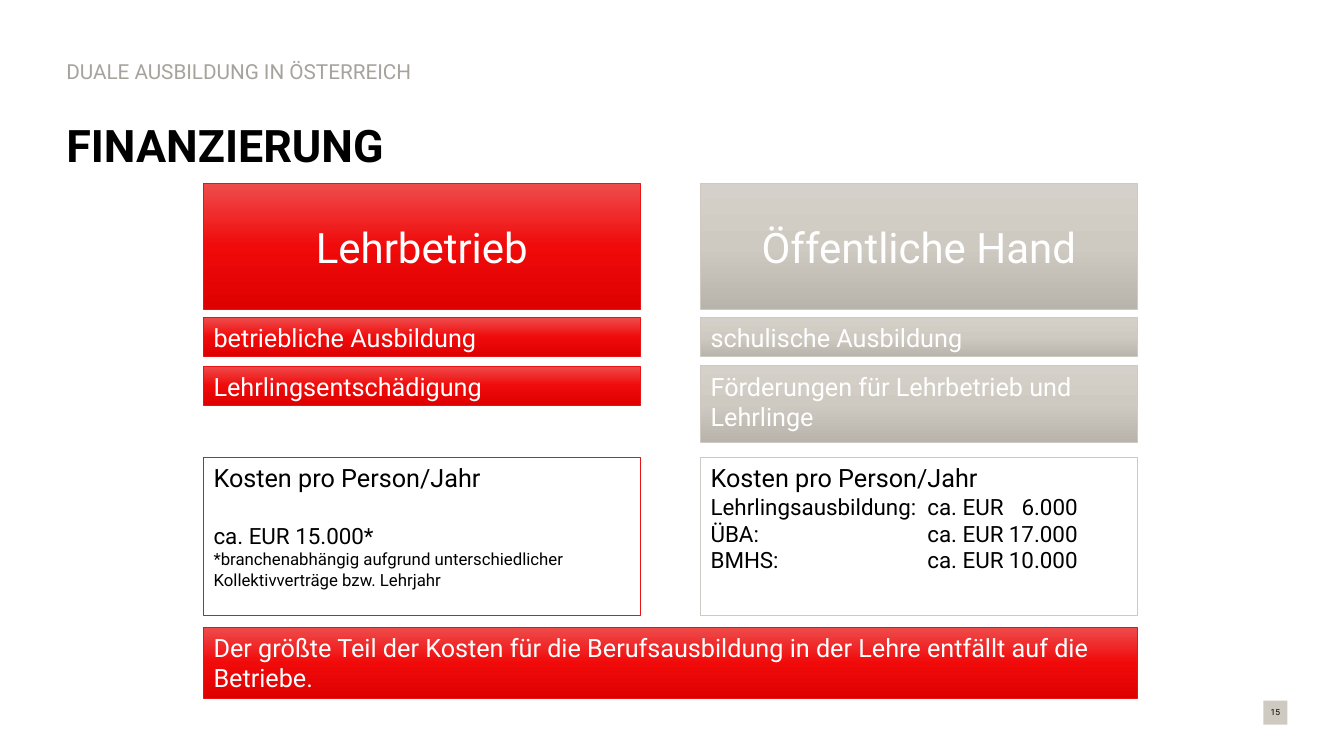
from copy import deepcopy
from lxml.etree import SubElement
from pptx import Presentation
from pptx.dml.color import RGBColor
from pptx.enum.shapes import MSO_SHAPE
from pptx.enum.text import MSO_ANCHOR, PP_ALIGN
from pptx.oxml.ns import qn
from pptx.util import Inches, Pt

FONT = "Roboto"
BLACK = RGBColor(0x00, 0x00, 0x00)
WHITE = RGBColor(0xFF, 0xFF, 0xFF)
GREY = RGBColor(0xA6, 0xA3, 0x9D)
RED = RGBColor(0xE6, 0x14, 0x14)
SAND = RGBColor(0xCE, 0xCA, 0xC2)
RED_STOPS = [RGBColor(0xEF, 0x4C, 0x4C), RGBColor(0xF0, 0x0A, 0x0A), RGBColor(0xDE, 0x00, 0x00)]
SAND_STOPS = [RGBColor(0xD5, 0xD1, 0xCA), RGBColor(0xCF, 0xCA, 0xC1), RGBColor(0xB8, 0xB4, 0xAB)]

TITLE = "FINANZIERUNG"
KICKER = "DUALE AUSBILDUNG IN ÖSTERREICH"
PAGE_NUMBER = "15"
CONCLUSION = ("Der größte Teil der Kosten für die Berufsausbildung in der Lehre "
              "entfällt auf die Betriebe.")
COST_HEADING = "Kosten pro Person/Jahr"
PAYERS = [
    {"name": "Lehrbetrieb", "color": RED, "stops": RED_STOPS,
     "duties": [("betriebliche Ausbildung", 0.39), ("Lehrlingsentschädigung", 0.39)],
     "costs": [("ca. EUR 15.000*", 16, 21),
               ("*branchenabhängig aufgrund unterschiedlicher "
                "Kollektivverträge bzw. Lehrjahr", 12, 0)]},
    {"name": "Öffentliche Hand", "color": SAND, "stops": SAND_STOPS,
     "duties": [("schulische Ausbildung", 0.39),
                ("Förderungen für Lehrbetrieb und Lehrlinge", 0.76)],
     "costs": [("Lehrlingsausbildung:\tca. EUR\t6.000", 16, 0),
               ("ÜBA:\tca. EUR\t17.000", 16, 0),
               ("BMHS:\tca. EUR\t10.000", 16, 0)]},
]
COST_TABS = [(2.15, "l"), (3.64, "r")]

LEFT, COLUMN_WIDTH, COLUMN_STEP = 2.02, 4.33, 4.93
NAME_TOP, NAME_HEIGHT = 1.82, 1.25
DUTY_TOP, DUTY_STEP = 3.15, 0.48
COST_TOP, COST_HEIGHT = 4.54, 1.57
CONCLUSION_TOP, CONCLUSION_HEIGHT = 6.22, 0.71

presentation = Presentation()
presentation.slide_width, presentation.slide_height = Inches(13.33), Inches(7.5)
slide = presentation.slides.add_slide(presentation.slide_layouts[6])


def write(paragraph, text, size, color, bold=False):
    run = paragraph.add_run()
    run.text = text
    run.font.name, run.font.size, run.font.bold = FONT, Pt(size), bold
    run.font.color.rgb = color


def add_heading(text, left, top, width, height, size, color, bold=False):
    frame = slide.shapes.add_textbox(
        Inches(left), Inches(top), Inches(width), Inches(height)).text_frame
    frame.word_wrap = True
    frame.vertical_anchor = MSO_ANCHOR.MIDDLE
    frame.paragraphs[0].line_spacing = 0.9
    write(frame.paragraphs[0], text, size, color, bold)


def add_box(left, top, width, height, anchor=MSO_ANCHOR.TOP, align=PP_ALIGN.LEFT):
    box = slide.shapes.add_shape(
        MSO_SHAPE.RECTANGLE, Inches(left), Inches(top), Inches(width), Inches(height))
    box.shadow.inherit = False
    box.text_frame.word_wrap = True
    box.text_frame.vertical_anchor = anchor
    box.text_frame.paragraphs[0].alignment = align
    return box


def outline(box, color, width):
    box.line.color.rgb = color
    box.line.width = Pt(width)


def shade(box, stops):
    box.fill.gradient()
    box.fill.gradient_angle = 270
    stop_list = box.element.spPr.find(".//" + qn("a:gsLst"))
    stop_list.append(deepcopy(stop_list[-1]))
    for index, (stop, color) in enumerate(zip(box.fill.gradient_stops, stops)):
        stop.color.rgb = color
        stop.position = index / 2


def add_banner(text, left, top, width, height, size, color, stops, **layout):
    banner = add_box(left, top, width, height, **layout)
    shade(banner, stops)
    outline(banner, color, 0.5)
    write(banner.text_frame.paragraphs[0], text, size, WHITE)


def set_tabs(paragraph, tabs):
    tab_list = SubElement(paragraph._p.get_or_add_pPr(), qn("a:tabLst"))
    for position, align in tabs:
        SubElement(tab_list, qn("a:tab"), pos=str(Inches(position)), algn=align)


add_heading(TITLE, 0.56, 0.89, 12.2, 1.16, 32, BLACK, bold=True)
add_heading(KICKER, 0.56, 0.56, 6.1, 0.33, 14.8, GREY)

page = add_box(12.53, 6.95, 0.24, 0.24, MSO_ANCHOR.MIDDLE, PP_ALIGN.CENTER)
page.fill.solid()
page.fill.fore_color.rgb = SAND
page.line.fill.background()
page_frame = page.text_frame
page_frame.margin_left = page_frame.margin_right = 0
page_frame.margin_top = page_frame.margin_bottom = 0
write(page_frame.paragraphs[0], PAGE_NUMBER, 6, BLACK)

for column, payer in enumerate(PAYERS):
    left = LEFT + column * COLUMN_STEP
    color, stops = payer["color"], payer["stops"]
    add_banner(payer["name"], left, NAME_TOP, COLUMN_WIDTH, NAME_HEIGHT, 30, color, stops,
               anchor=MSO_ANCHOR.MIDDLE, align=PP_ALIGN.CENTER)
    for row, (duty, height) in enumerate(payer["duties"]):
        add_banner(duty, left, DUTY_TOP + row * DUTY_STEP, COLUMN_WIDTH, height,
                   18, color, stops)

    cost = add_box(left, COST_TOP, COLUMN_WIDTH, COST_HEIGHT)
    cost.fill.background()
    outline(cost, color, 0.75)
    write(cost.text_frame.paragraphs[0], COST_HEADING, 18, BLACK)
    for text, size, space_before in payer["costs"]:
        paragraph = cost.text_frame.add_paragraph()
        paragraph.alignment = PP_ALIGN.LEFT
        paragraph.space_before = Pt(space_before)
        if "\t" in text:
            set_tabs(paragraph, COST_TABS)
        write(paragraph, text, size, BLACK)

add_banner(CONCLUSION, LEFT, CONCLUSION_TOP, COLUMN_STEP + COLUMN_WIDTH, CONCLUSION_HEIGHT,
           18, RED, RED_STOPS)

presentation.save("out.pptx")
